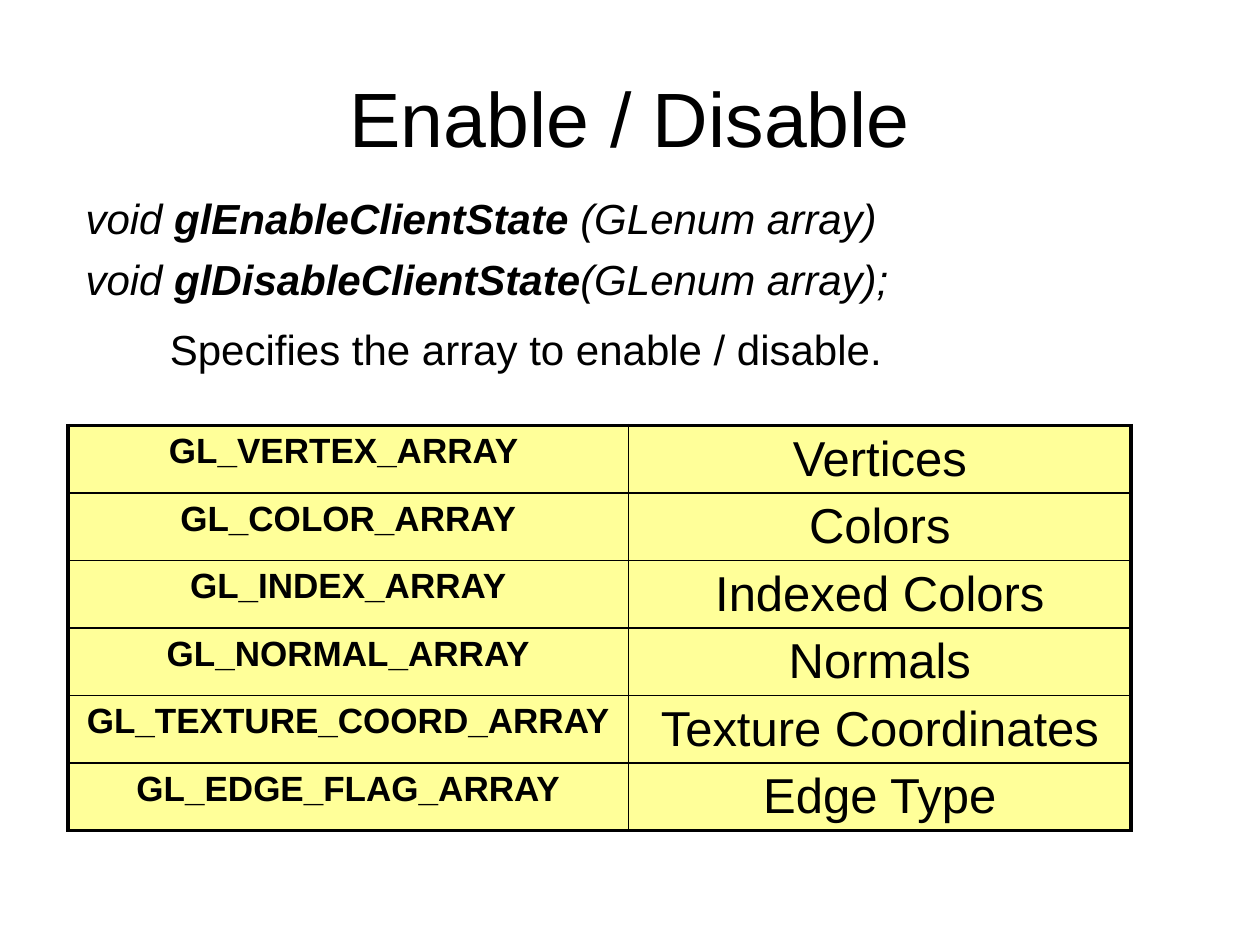
from lxml.etree import SubElement
from pptx import Presentation
from pptx.dml.color import RGBColor
from pptx.enum.text import MSO_ANCHOR, MSO_AUTO_SIZE, PP_ALIGN
from pptx.oxml.ns import qn
from pptx.util import Cm, Pt

BLACK = RGBColor(0x00, 0x00, 0x00)
PALE_YELLOW = RGBColor(0xFF, 0xFF, 0x99)
THIN, THICK = Pt(1), Pt(2.25)


def add_text(paragraph, text, size=24, bold=False, italic=False, color=BLACK):
    run = paragraph.add_run()
    run.text = text
    run.font.name = "Arial"
    run.font.size = Pt(size)
    run.font.bold = bold
    run.font.italic = italic
    run.font.color.rgb = color


def add_border(cell, side, width):
    line = SubElement(cell._tc.get_or_add_tcPr(), qn(f"a:ln{side}"), w=str(width))
    fill = SubElement(line, qn("a:solidFill"))
    SubElement(fill, qn("a:srgbClr"), val=str(BLACK))


presentation = Presentation()
presentation.slide_width, presentation.slide_height = Cm(25.4), Cm(19.05)
slide = presentation.slides.add_slide(presentation.slide_layouts[1])
title, body = slide.placeholders

# Title
title.left, title.top, title.width, title.height = Cm(1.27), Cm(0.76), Cm(22.86), Cm(3.18)
title.text_frame.vertical_anchor = MSO_ANCHOR.MIDDLE
title_paragraph = title.text_frame.paragraphs[0]
title_paragraph.alignment = PP_ALIGN.CENTER
add_text(title_paragraph, "Enable / Disable", size=44)

# Function signatures and their explanation
body.left, body.top, body.width, body.height = Cm(1.47), Cm(3.66), Cm(22.35), Cm(4.09)
body_frame = body.text_frame
body_frame.auto_size = MSO_AUTO_SIZE.NONE
body_frame.margin_top = Cm(0.23)
body_lines = [
    (0, [("void ", dict(italic=True)),
         ("glEnableClientState ", dict(italic=True, bold=True)),
         ("(GLenum array)", dict(italic=True))]),
    (6, [("void ", dict(italic=True)),
         ("glDisableClientState", dict(italic=True, bold=True)),
         ("(GLenum array);", dict(italic=True))]),
    (7, [("\tSpecifies the array to enable / disable.", {}),
         (" ", dict(size=28))]),
]
for index, (space_before, runs) in enumerate(body_lines):
    paragraph = body_frame.add_paragraph() if index else body_frame.paragraphs[0]
    properties = paragraph._p.get_or_add_pPr()
    properties.set("marL", str(Cm(1.7)))
    properties.set("indent", str(Cm(-1.7)))
    SubElement(properties, qn("a:buNone"))
    paragraph.space_before = Pt(space_before)
    for text, text_format in runs:
        add_text(paragraph, text, **text_format)

# Table of array constants
arrays = [
    ("GL_VERTEX_ARRAY ", "Vertices"),
    ("GL_COLOR_ARRAY", "Colors"),
    ("GL_INDEX_ARRAY", "Indexed Colors"),
    ("GL_NORMAL_ARRAY", "Normals"),
    ("GL_TEXTURE_COORD_ARRAY", "Texture Coordinates"),
    ("GL_EDGE_FLAG_ARRAY", "Edge Type"),
]
row_height = Cm(1.36)
table = slide.shapes.add_table(
    len(arrays), 2, Cm(1.37), Cm(8.58), Cm(21.43), row_height * len(arrays)
).table
table.first_row = False
table.horz_banding = False
table.columns[0].width, table.columns[1].width = Cm(11.3), Cm(10.13)
for row, texts in enumerate(arrays):
    table.rows[row].height = row_height
    for column, text in enumerate(texts):
        cell = table.cell(row, column)
        cell.margin_top, cell.margin_bottom = Cm(0.13), Cm(0.08)
        # Thick lines around the table, thin lines inside
        add_border(cell, "L", THICK if column == 0 else THIN)
        add_border(cell, "R", THICK if column == 1 else THIN)
        add_border(cell, "T", THICK if row == 0 else THIN)
        add_border(cell, "B", THICK if row == len(arrays) - 1 else THIN)
        cell.fill.solid()
        cell.fill.fore_color.rgb = PALE_YELLOW
        paragraph = cell.text_frame.paragraphs[0]
        paragraph.alignment = PP_ALIGN.CENTER
        add_text(paragraph, text, size=28 if column else 20, bold=column == 0)

presentation.save("out.pptx")
